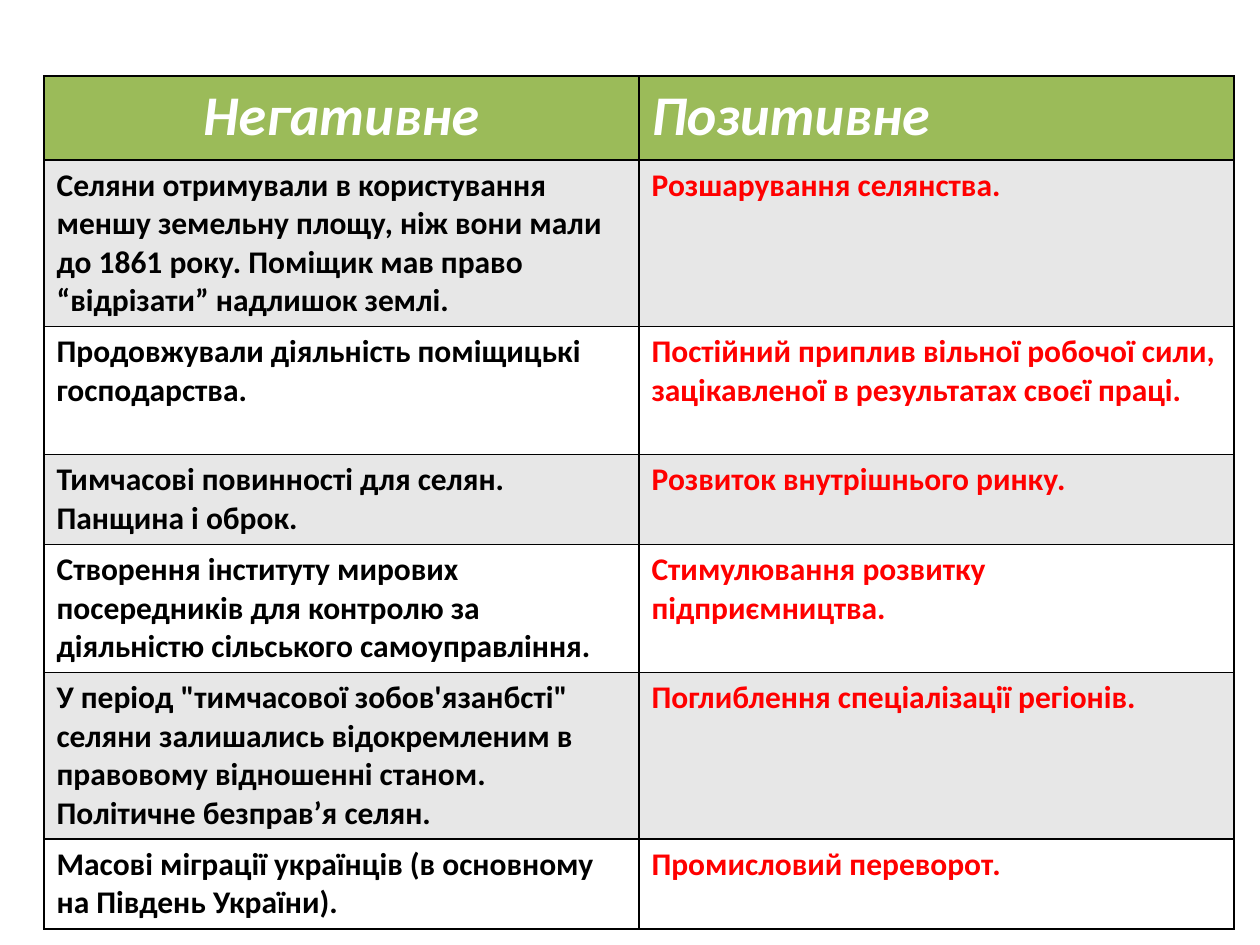
"""Build a slide with a two-column table of negative and positive consequences."""
from lxml import etree
from pptx import Presentation
from pptx import util as u
from pptx.dml import color
from pptx.enum import text
from pptx.oxml import ns

PX = 914400 / 126


def px(n):
    return u.Emu(round(n * PX))


def rgb(value):
    return color.RGBColor.from_string(value)


ROWS = [
    (84, "Негативне", "Позитивне"),
    (166, "Селяни отримували в користування меншу земельну площу, ніж вони мали "
          "до 1861 року. Поміщик мав право “відрізати” надлишок землі.",
     "Розшарування селянства."),
    (128, "Продовжували діяльність поміщицькі господарства.",
     "Постійний приплив вільної робочої сили, зацікавленої в результатах своєї праці."),
    (90, "Тимчасові повинності для селян. Панщина і оброк.",
     "Розвиток внутрішнього ринку."),
    (128, "Створення інституту мирових посередників для контролю за діяльністю "
          "сільського самоуправління.",
     "Стимулювання розвитку підприємництва."),
    (166, "У період \"тимчасової зобов'язанбсті\" селяни залишались відокремленим "
          "в правовому відношенні станом. Політичне безправ’я селян.",
     "Поглиблення спеціалізації регіонів."),
    (90, "Масові міграції українців (в основному на Південь України).",
     "Промисловий переворот."),
]

prs = Presentation()
prs.slide_width, prs.slide_height = px(1260), px(945)
s = prs.slides.add_slide(prs.slide_layouts[6])

height = sum(row[0] for row in ROWS)
table = s.shapes.add_table(len(ROWS), 2, px(44), px(76), px(1190), px(height)).table
for column in table.columns:
    column.width = px(595)

for i, (row_height, *words) in enumerate(ROWS):
    table.rows[i].height = px(row_height)
    header = i == 0
    for j, word in enumerate(words):
        cell = table.cell(i, j)
        tc_pr = cell._tc.get_or_add_tcPr()
        for side in ("a:lnL", "a:lnR", "a:lnT", "a:lnB"):
            ln = etree.SubElement(tc_pr, ns.qn(side), w=str(u.Pt(1)))
            line_fill = etree.SubElement(ln, ns.qn("a:solidFill"))
            etree.SubElement(line_fill, ns.qn("a:srgbClr"), val="000000")
        cell.fill.solid()
        cell.fill.fore_color.rgb = rgb("9BBB59" if header else ("FFFFFF", "E7E7E7")[i % 2])
        p = cell.text_frame.paragraphs[0]
        if header and j == 0:
            p.alignment = text.PP_ALIGN.CENTER
        r = p.add_run()
        r.text = word
        r.font.name = "Calibri"
        r.font.size = u.Pt(32 if header else 18)
        r.font.bold = True
        r.font.italic = header
        r.font.color.rgb = rgb("FFFFFF" if header else ("000000", "FF0000")[j])

prs.save("out.pptx")
